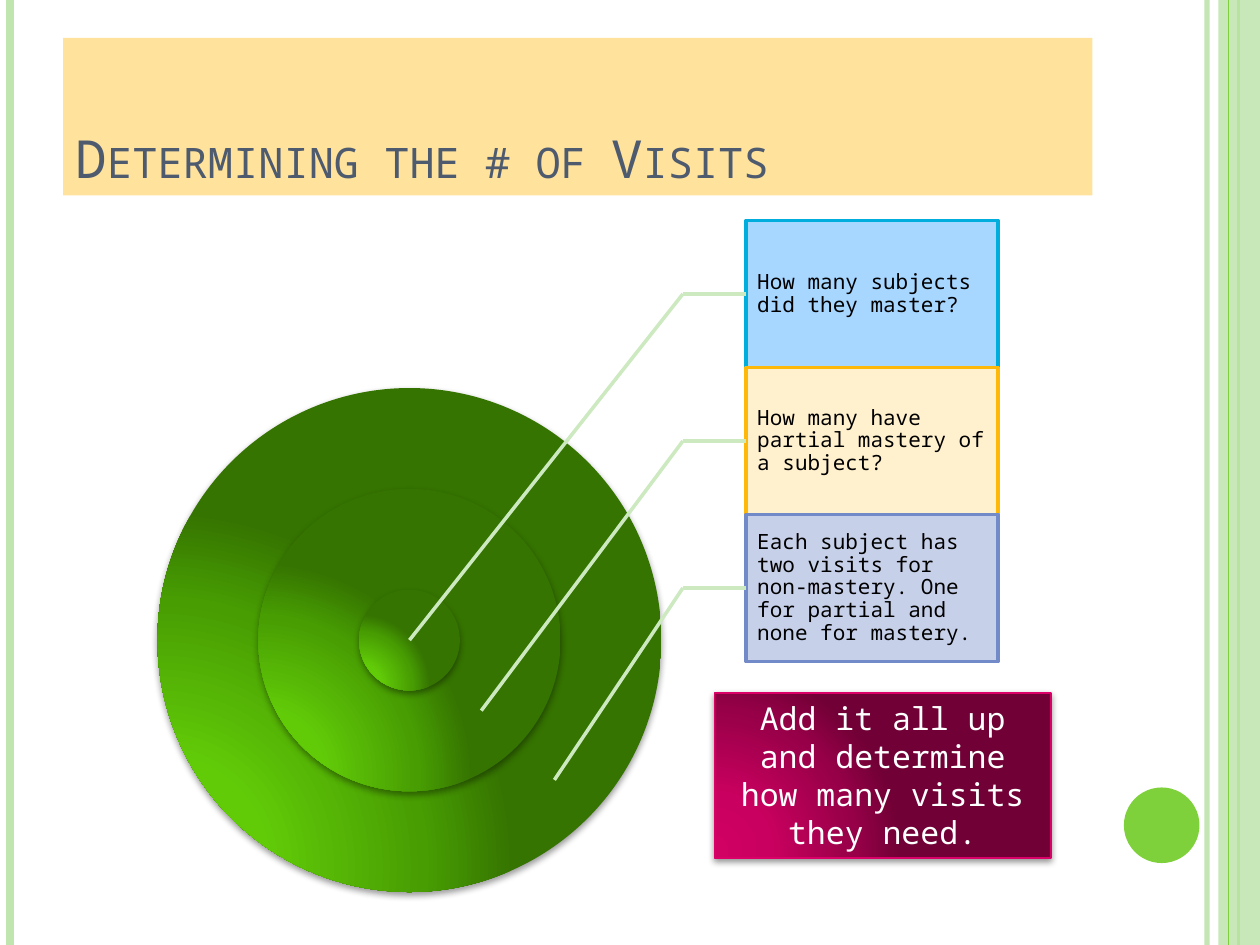
from dataclasses import dataclass

from lxml import etree
from pptx import Presentation
from pptx import util as u
from pptx.dml.color import RGBColor
from pptx.enum import shapes, text
from pptx.oxml.ns import qn


@dataclass(frozen=True)
class Theme:
    font: str = "Noto Sans Mono"
    title_size: int = 30
    label_size: int = 12
    callout_size: int = 18
    title_ink: str = "4E5B6F"
    title_fill: str = "FFE39D"
    ink: str = "000000"
    white: str = "FFFFFF"
    pale: str = "C0E5AF"
    accent: str = "7FD13B"
    leader: str = "CCE9BF"
    callout_line: str = "DA0068"
    green: tuple = ("64D308", "61CB08", "489D02", "357401")
    magenta: tuple = ("D10063", "C9005F", "970048", "700035")


THEME = Theme()
STOPS = (0, 30, 75, 100)
LABELS = [  # wording, fill, border
    ("How many subjects did they master?", "A7D6FF", "00ADDC"),
    ("How many have partial mastery of a subject?", "FFF1CE", "FEB80A"),
    ("Each subject has two visits for non-mastery. One for partial and "
     "none for mastery.", "C7D0E9", "738AC8"),
]
TARGETS = [(2, 2), (2.57, 2.56), (3.15, 3.11)]  # leader ends inside the rings


def child(parent, tag, **attributes):
    element = etree.SubElement(parent, qn(tag))
    for name, value in attributes.items():
        element.set(name, str(value))
    return element


def set_alpha(fill_parent, percent):
    color = fill_parent.find(".//" + qn("a:srgbClr"))
    child(color, "a:alpha", val=percent * 1000)


def add_shape(page, kind, box, fill=None, line=None, width=1):
    shape = page.shapes.add_shape(kind, *map(u.Inches, box))
    shape.shadow.inherit = False
    if fill:
        shape.fill.solid()
        shape.fill.fore_color.rgb = RGBColor.from_string(fill)
    if line:
        shape.line.color.rgb = RGBColor.from_string(line)
        shape.line.width = u.Pt(width)
    else:
        shape.line.fill.background()
    return shape


def add_line(page, start, end, color, width):
    line = page.shapes.add_connector(
        shapes.MSO_CONNECTOR.STRAIGHT, *map(u.Inches, (*start, *end)))
    line.line.color.rgb = RGBColor.from_string(color)
    line.line.width = u.Pt(width)
    child(line._element.spPr, "a:effectLst")
    return line


def add_glow(shape, colors, alpha, distance):
    """Give the shape a radial gradient and a soft shadow below it."""
    shape.fill.gradient()
    properties = shape._element.spPr
    gradient = properties.find(qn("a:gradFill"))
    for old in list(gradient):
        gradient.remove(old)
    stops = child(gradient, "a:gsLst")
    for position, color in zip(STOPS, colors):
        stop = child(stops, "a:gs", pos=position * 1000)
        child(stop, "a:srgbClr", val=color)
    circle = child(gradient, "a:path", path="circle")
    child(circle, "a:fillToRect", l=5000, t=100000, r=120000, b=10000)
    shadow = child(properties.find(qn("a:effectLst")), "a:outerShdw",
                   blurRad=u.Pt(4), dist=u.Pt(distance), dir=5400000,
                   rotWithShape=0)
    child(child(shadow, "a:srgbClr", val="000000"), "a:alpha", val=alpha * 1000)


def write(shape, wording, frame_format, para_format, size, color):
    frame = shape.text_frame
    for name, value in {"word_wrap": True, **frame_format}.items():
        setattr(frame, name, value)
    para = frame.paragraphs[0]
    span = para.add_run()
    span.text = wording
    for name, value in para_format.items():
        setattr(para, name, value)
    for name, value in {"name": THEME.font, "size": u.Pt(size),
                        "bold": False}.items():
        setattr(span.font, name, value)
    span.font.color.rgb = RGBColor.from_string(color)
    return span


def add_frame(page, width, height):
    """Draw the stripes down both edges and the dot at the lower right."""
    def stripe(x, color, weight):
        return add_line(page, (x, 0), (x, height), color, weight)

    set_alpha(stripe(width - 0.42, THEME.pale, 3)._element.spPr, 93)
    stripe(0.08, THEME.pale, 4.5)
    stripe(width - 0.17, THEME.accent, 1.5)
    band = add_shape(page, shapes.MSO_SHAPE.RECTANGLE,
                     (width - 0.33, 0, 0.33, height), THEME.pale)
    set_alpha(band._element.spPr, 87)
    stripe(width - 0.25, THEME.accent, 0.75)
    add_shape(page, shapes.MSO_SHAPE.OVAL,
              (width - 1.08, height - 1.25, 0.6, 0.6), THEME.accent)


def add_title(page, box):
    title = page.shapes.title
    for name, value in zip(("left", "top", "width", "height"), box):
        setattr(title, name, u.Inches(value))
    title.fill.solid()
    title.fill.fore_color.rgb = RGBColor.from_string(THEME.title_fill)
    span = write(title, "Determining the # of Visits",
                 {"vertical_anchor": text.MSO_ANCHOR.BOTTOM,
                  "auto_size": text.MSO_AUTO_SIZE.NONE},
                 {"alignment": text.PP_ALIGN.LEFT},
                 THEME.title_size, THEME.title_ink)
    span._r.get_or_add_rPr().set("cap", "small")


def add_rings(page, box):
    left, top, size, _ = box
    for share in (1, 0.6, 0.2):
        inset = size * (1 - share) / 2
        ring = add_shape(page, shapes.MSO_SHAPE.OVAL,
                         (left + inset, top + inset, size * share, size * share))
        add_glow(ring, THEME.green, 40, 2)


def add_labels(page, box, rings):
    """Stack the labels and lead each one to its ring."""
    left, top, width, height = box
    step = height / len(LABELS)
    for row, ((wording, fill, border), (dx, dy)) in enumerate(zip(LABELS, TARGETS)):
        y = top + row * step
        label = add_shape(page, shapes.MSO_SHAPE.RECTANGLE,
                          (left, y, width, step), fill, border, 2)
        small = u.Inches(0.02)
        write(label, wording,
              {"vertical_anchor": text.MSO_ANCHOR.MIDDLE,
               "margin_left": u.Inches(0.09), "margin_right": small,
               "margin_top": small, "margin_bottom": small},
              {"alignment": text.PP_ALIGN.LEFT, "line_spacing": 0.9},
              THEME.label_size, THEME.ink)
        middle = y + step / 2
        elbow = (left - 0.5, middle)
        add_line(page, elbow, (left, middle), THEME.leader, 2)
        add_line(page, elbow, (rings[0] + dx, rings[1] + dy), THEME.leader, 2)


def add_callout(page, box):
    callout = add_shape(page, shapes.MSO_SHAPE.RECTANGLE, box,
                        line=THEME.callout_line)
    add_glow(callout, THEME.magenta, 42, 1.6)
    write(callout, "Add it all up and determine how many visits they need.",
          {"vertical_anchor": text.MSO_ANCHOR.TOP},
          {"alignment": text.PP_ALIGN.CENTER},
          THEME.callout_size, THEME.white)


def main():
    deck = Presentation()
    width, height = 10, 7.5
    deck.slide_width, deck.slide_height = u.Inches(width), u.Inches(height)
    page = deck.slides.add_slide(deck.slide_layouts.get_by_name("Title Only"))
    rings = (1.25, 3.08, 4, 4)
    add_frame(page, width, height)
    add_title(page, (0.5, 0.3, 8.17, 1.25))
    add_rings(page, rings)
    add_labels(page, (5.92, 1.75, 2, 3.5), rings)
    add_callout(page, (5.67, 5.5, 2.67, 1.31))
    deck.save("out.pptx")


if __name__ == "__main__":
    main()
